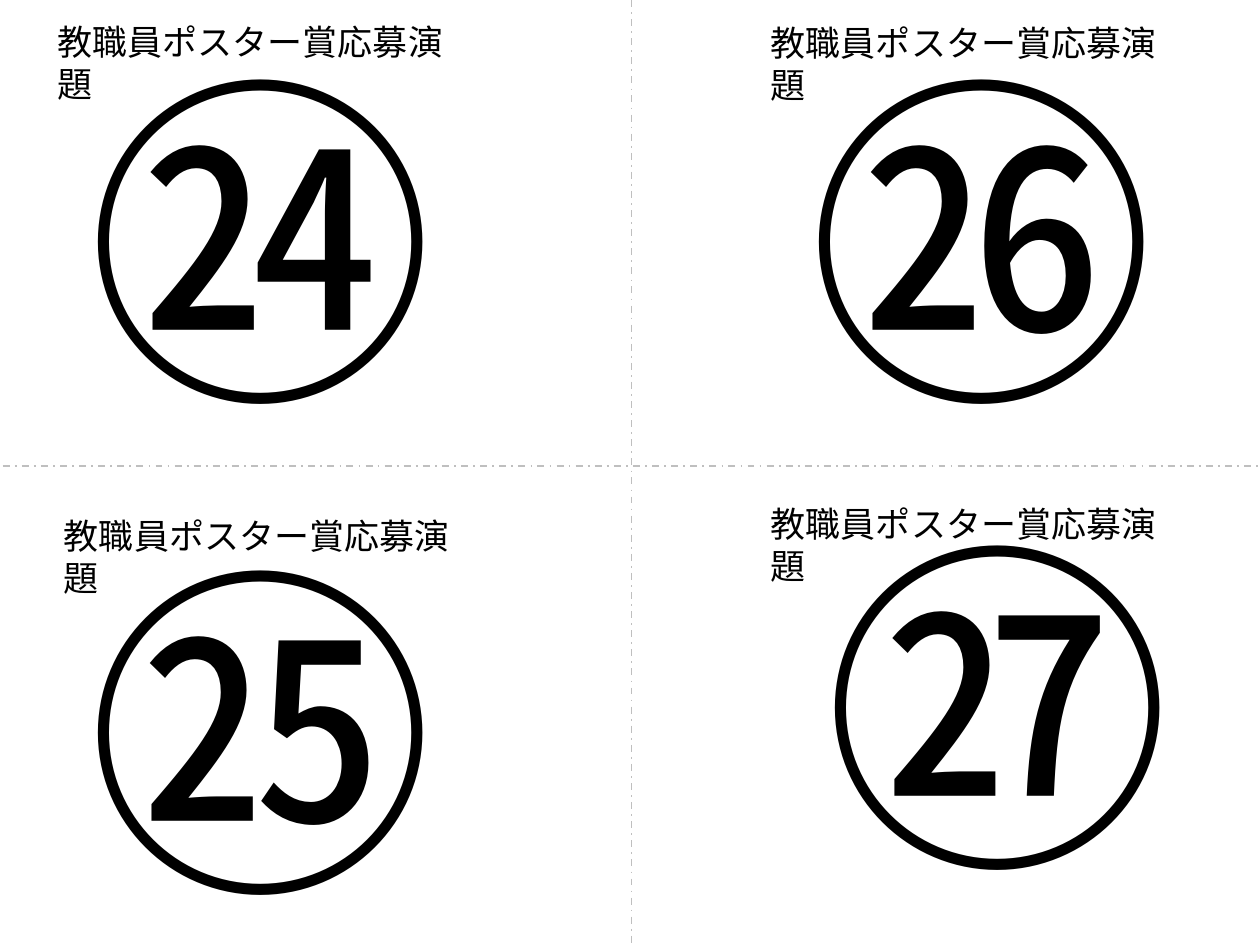
import pptx
import pptx.dml.color
import pptx.enum.dml
import pptx.enum.shapes
import pptx.enum.text
import pptx.oxml.ns
import pptx.oxml.xmlchemy
import pptx.util
from pptx.util import Cm

BLACK = pptx.dml.color.RGBColor(0x00, 0x00, 0x00)
CUT_GRAY = pptx.dml.color.RGBColor(0xBF, 0xBF, 0xBF)
FONT = "Noto Sans CJK JP"

AWARD = "教職員ポスター賞応募演題"
CARDS = [
    {"number": "㉔", "number_at": (1.5, 0.41), "award_at": (0.91, 0.28)},
    {"number": "㉖", "number_at": (16.03, 0.41), "award_at": (15.29, 0.3)},
    {"number": "㉕", "number_at": (1.5, 10.31), "award_at": (1.04, 10.24)},
    {"number": "㉗", "number_at": (16.36, 9.8), "award_at": (15.29, 10.01)},
]
CUT_LINES = [
    ((-0.33, 9.4), (25.4, 9.4)),
    ((12.73, 0), (12.73, 19.2)),
]
NUMBER_SIZE, NUMBER_POINTS = (7.59, 8.76), 199
AWARD_SIZE, AWARD_POINTS = (8.76, 1.12), 20


def add_cut_line(slide, start, end):
    cut = slide.shapes.add_connector(
        pptx.enum.shapes.MSO_CONNECTOR.STRAIGHT, *map(Cm, start + end))
    cut.line.color.rgb = CUT_GRAY
    cut.line.width = pptx.util.Pt(1)
    cut.line.dash_style = pptx.enum.dml.MSO_LINE.DASH_DOT
    cut._element.spPr.append(pptx.oxml.xmlchemy.OxmlElement("a:effectLst"))


def add_label(slide, text, position, size, points):
    label = slide.shapes.add_textbox(*map(Cm, position + size))
    frame = label.text_frame
    frame.word_wrap = True
    frame.auto_size = pptx.enum.text.MSO_AUTO_SIZE.SHAPE_TO_FIT_TEXT
    paragraph = frame.paragraphs[0]
    paragraph.text = text
    paragraph.font.size = pptx.util.Pt(points)
    paragraph.font.color.rgb = BLACK
    paragraph.font.name = FONT
    east_asian = pptx.oxml.xmlchemy.OxmlElement("a:ea")
    east_asian.set("typeface", FONT)
    paragraph._p.pPr.find(pptx.oxml.ns.qn("a:defRPr")).append(east_asian)


def main():
    presentation = pptx.Presentation()
    presentation.slide_width = Cm(25.4)
    presentation.slide_height = Cm(19.05)
    slide = presentation.slides.add_slide(presentation.slide_layouts[6])
    for start, end in CUT_LINES:
        add_cut_line(slide, start, end)
    for card in CARDS:
        add_label(slide, card["number"], card["number_at"], NUMBER_SIZE, NUMBER_POINTS)
        add_label(slide, AWARD, card["award_at"], AWARD_SIZE, AWARD_POINTS)
    presentation.save("out.pptx")


if __name__ == "__main__":
    main()
